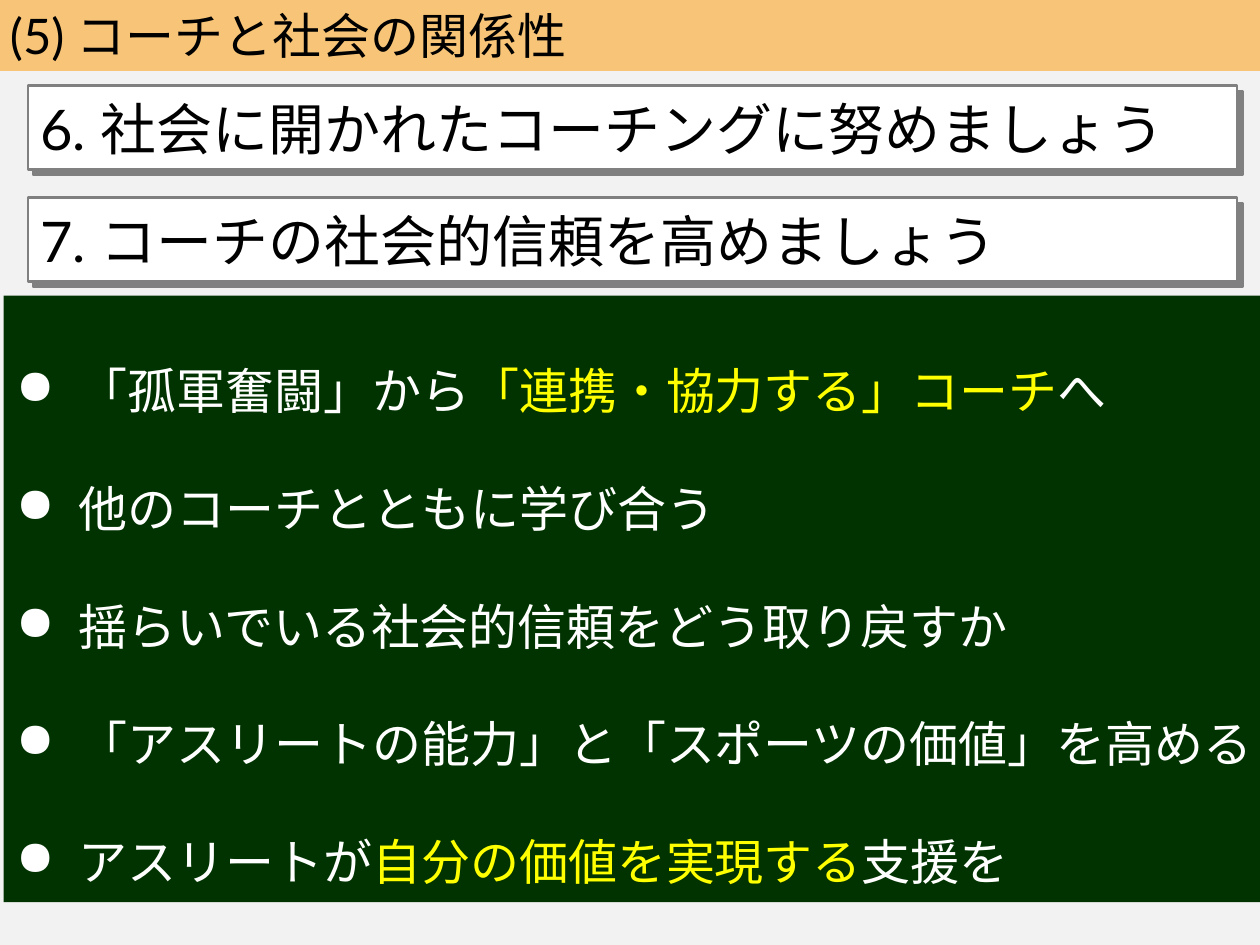
from lxml.etree import SubElement
from pptx import Presentation
from pptx.dml.color import RGBColor
from pptx.enum.shapes import MSO_SHAPE
from pptx.enum.text import MSO_ANCHOR, MSO_AUTO_SIZE, PP_ALIGN
from pptx.oxml.ns import qn
from pptx.util import Pt

WHITE, BLACK, YELLOW, GRAY = "FFFFFF", "000000", "FFFF00", "808080"


def paint(fill, color):
    fill.solid()
    fill.fore_color.rgb = RGBColor.from_string(color)


def place(shape, box):
    shape.left, shape.top, shape.width, shape.height = (Pt(v) for v in box)


def add_rect(slide, box, color):
    shape = slide.shapes.add_shape(MSO_SHAPE.RECTANGLE, *(Pt(v) for v in box))
    shape.shadow.inherit = False
    paint(shape.fill, color)
    shape.line.fill.background()
    return shape


def write(frame, lines, size=28, color=BLACK, spacing=None, bullet=None,
          anchor=MSO_ANCHOR.TOP, wrap=True):
    frame.word_wrap = wrap
    frame.auto_size = MSO_AUTO_SIZE.NONE
    frame.vertical_anchor = anchor
    for i, line in enumerate(lines):
        para = frame.add_paragraph() if i else frame.paragraphs[0]
        para.alignment = PP_ALIGN.LEFT
        if spacing:
            para.line_spacing = spacing
        if bullet:
            props = para._p.get_or_add_pPr()
            props.set("marL", str(Pt(36)))
            props.set("indent", str(-Pt(36)))
            SubElement(props, qn("a:buChar")).set("char", bullet)
        for text, tint in line:
            run = para.add_run()
            run.text = text
            run.font.name = "Lato"
            run.font.size = Pt(size)
            run.font.color.rgb = RGBColor.from_string(tint or color)


def cast_shadow(shape, color, dist, angle):
    effects = shape._element.spPr.find(qn("a:effectLst"))
    outer = SubElement(effects, qn("a:outerShdw"), dist=str(Pt(dist)),
                       dir=str(angle * 60000), algn="ctr", rotWithShape="0")
    SubElement(outer, qn("a:srgbClr"), val=color)


def add_header(slide, box, text):
    title = slide.shapes.title
    place(title, box)
    paint(title.fill, "FF9900")
    tone = title._element.spPr.find(qn("a:solidFill"))[0]
    SubElement(tone, qn("a:alpha"), val="50000")
    write(title.text_frame, [[(text, None)]])


def add_card(slide, box, text):
    card = add_rect(slide, box, WHITE)
    paint(card.line.fill, GRAY)
    card.line.width = Pt(1.5)
    cast_shadow(card, GRAY, 4.2, 45)
    write(card.text_frame, [[(text, None)]], size=32,
          anchor=MSO_ANCHOR.MIDDLE, wrap=False)


def add_board(slide, box, lines):
    board = add_rect(slide, box, "003300")
    write(board.text_frame, lines, color=WHITE, spacing=2.0, bullet="●")


def main():
    deck = Presentation()
    deck.slide_width, deck.slide_height = Pt(720), Pt(540)
    slide = deck.slides.add_slide(deck.slide_layouts[5])
    paint(slide.background.fill, "F2F2F2")

    add_header(slide, (-1.5, -0.5, 721.5, 41), "(5) コーチと社会の関係性")
    add_board(slide, (2, 169, 726.5, 346.5), [
        [("「孤軍奮闘」から", None), ("「連携・協力する」コーチ", YELLOW), ("へ", None)],
        [("他のコーチとともに学び合う", None)],
        [("揺らいでいる社会的信頼をどう取り戻すか", None)],
        [("「アスリートの能力」と「スポーツの価値」を高める", None)],
        [("アスリートが", None), ("自分の価値を実現する", YELLOW), ("支援を", None)],
    ])
    cards = ["6. 社会に開かれたコーチングに努めましょう",
             "7. コーチの社会的信頼を高めましょう"]
    for i, text in enumerate(cards):
        add_card(slide, (16, 49 + 64 * i, 691, 48), text)

    deck.save("out.pptx")


if __name__ == "__main__":
    main()
